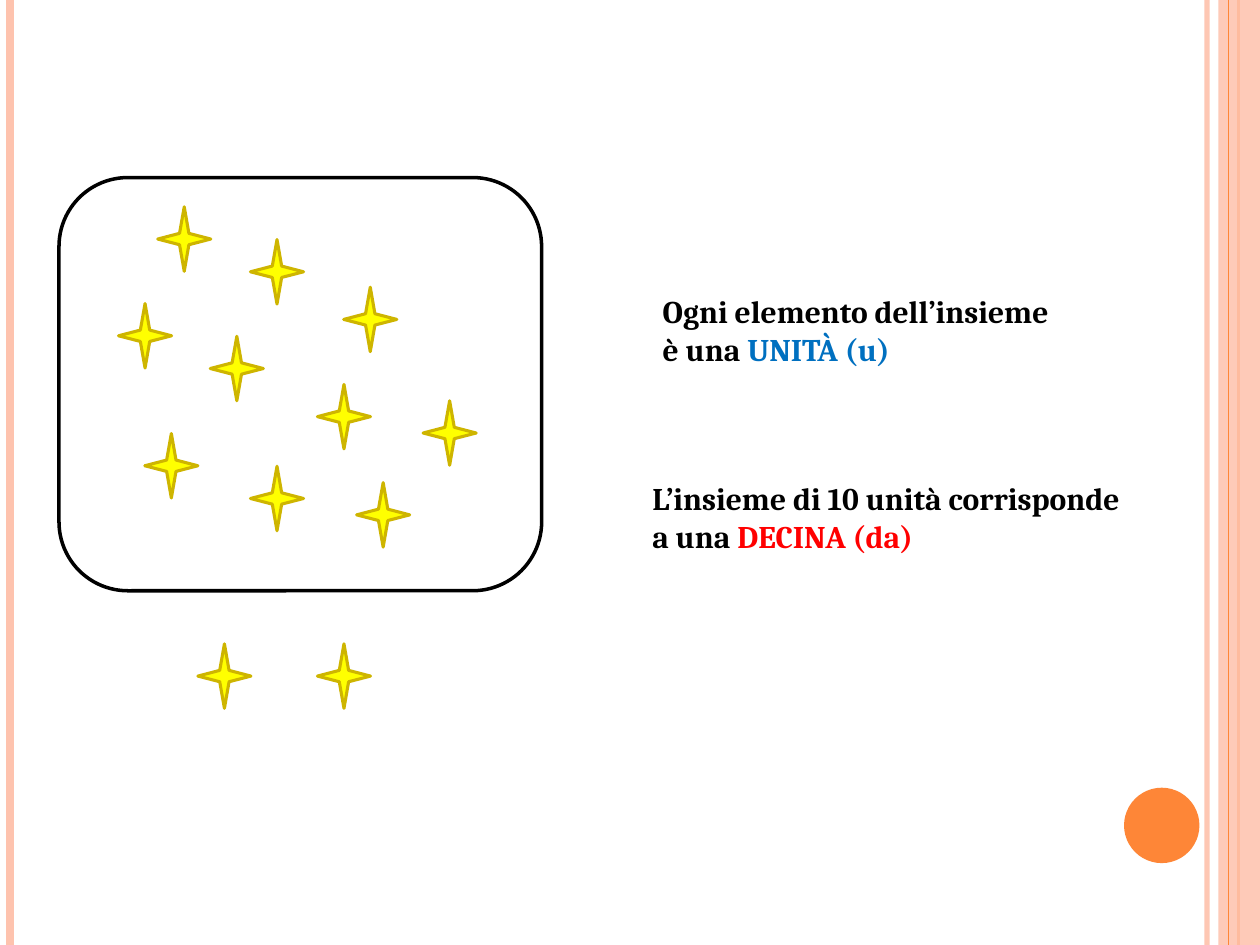
import pptx
import pptx.util
import pptx.dml.color
import pptx.enum.shapes
import pptx.enum.text
import pptx.oxml
import pptx.oxml.ns
from pptx.util import Cm, Pt

KIND = pptx.enum.shapes.MSO_SHAPE
qn = pptx.oxml.ns.qn


def paint(fill, shade, alpha=100):
    fill.solid()
    fill.fore_color.rgb = pptx.dml.color.RGBColor.from_string(shade)
    if alpha < 100:
        node = next(fill._xPr.iter(qn("a:srgbClr")))
        node.append(pptx.oxml.parse_xml(
            '<a:alpha xmlns:a="http://schemas.openxmlformats.org/drawingml/2006/main"'
            f' val="{alpha * 1000}"/>'))


def draw(shapes, kind, left, top, width, height):
    shape = shapes.add_shape(kind, Cm(left), Cm(top), Cm(width), Cm(height))
    shape.shadow.inherit = False
    return shape


deck = pptx.Presentation()
deck.slide_width, deck.slide_height = Cm(25.4), Cm(19.05)
slide = deck.slides.add_slide(deck.slide_layouts[6])
shapes = slide.shapes

# Vertical stripes, with the wide band between them
for x, shade, weight, alpha in [
    (24.33, "FEC3AE", 3, 93),
    (0.21, "FEC3AE", 4.5, 100),
    (24.97, "FE8637", 1.5, 100),
    (None, "FEC3AE", 0, 87),
    (24.77, "FE8637", 0.75, 100),
]:
    if x is None:
        band = draw(shapes, KIND.RECTANGLE, 24.56, 0, 0.84, 19.05)
        paint(band.fill, shade, alpha)
        band.line.fill.background()
        continue
    stripe = shapes.add_connector(
        pptx.enum.shapes.MSO_CONNECTOR.STRAIGHT, Cm(x), 0, Cm(x), deck.slide_height)
    stripe.line.width = Pt(weight)
    paint(stripe.line.fill, shade, alpha)
    stripe._element.spPr.append(pptx.oxml.xmlchemy.OxmlElement("a:effectLst"))

# Corner disc
disc = draw(shapes, KIND.OVAL, 22.66, 15.88, 1.52, 1.52)
paint(disc.fill, "FE8637")
disc.line.fill.background()

# Stars: ten in the set, two left over
group = shapes.add_group_shape()
for left, top in [
    (3.18, 4.17), (2.39, 6.12), (4.24, 6.78), (6.4, 7.75),
    (2.92, 8.74), (5.05, 9.4), (7.19, 9.73), (8.53, 8.08),
    (3.99, 12.98), (6.4, 12.98), (5.05, 4.83), (6.93, 5.79),
]:
    star = draw(group.shapes, KIND.STAR_4_POINT, left, top, 1.07, 1.3)
    paint(star.fill, "FFFF00")
    paint(star.line.fill, "CEB500")
    star.line.width = Pt(1.75)

# Outline of the set
ring = draw(shapes, KIND.ROUNDED_RECTANGLE, 1.19, 3.58, 9.73, 8.33)
ring.fill.background()
paint(ring.line.fill, "000000")
ring.line.width = Pt(2)

# Explanations
for left, top, width, first, lead, term, shade in [
    (13.11, 5.77, 9.73, "Ogni elemento dell’insieme",
     "è una ", "UNITÀ (u)", "0070C0"),
    (12.9, 9.53, 11.66, "L’insieme di 10 unità corrisponde",
     "a una ", "DECINA (da)", "FF0000"),
]:
    frame = shapes.add_textbox(Cm(left), Cm(top), Cm(width), Cm(1.8)).text_frame
    frame.word_wrap = False
    frame.auto_size = pptx.enum.text.MSO_AUTO_SIZE.SHAPE_TO_FIT_TEXT
    frame.text = f"{first}\n{lead}"
    frame.paragraphs[1].add_run().text = term
    for para in frame.paragraphs:
        for run in para.runs:
            run.font.name = "Cambria"
            run.font.size = Pt(18)
            run.font.bold = True
            paint(run.font.fill, shade if run.text == term else "000000")

deck.save("out.pptx")
